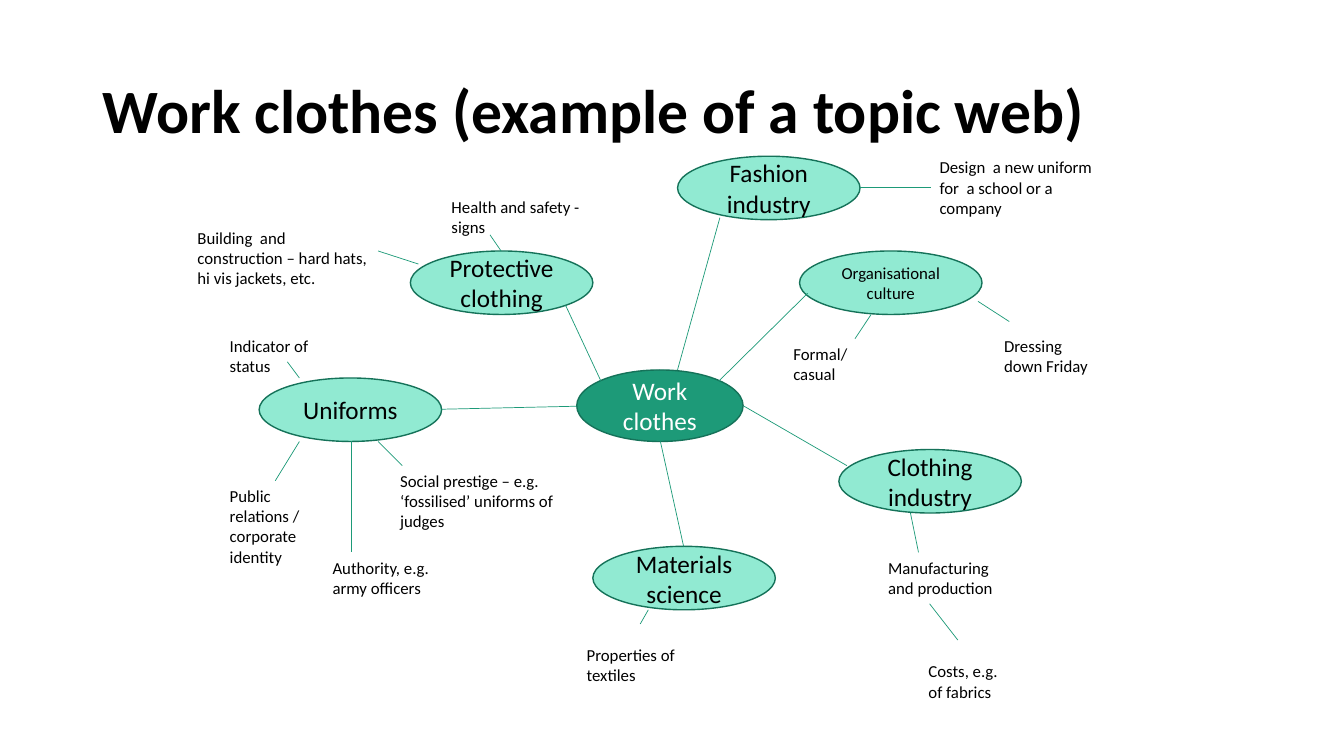
import pptx
import pptx.dml.color
import pptx.enum.shapes
import pptx.enum.text
import pptx.oxml.ns
import pptx.util

EMU_PER_PX = 9144
FONT = "Calibri"
BLACK, WHITE = "000000", "FFFFFF"
GREEN, DARK_GREEN, MINT = "1D9A78", "157259", "91EAD2"
TOPIC_WIDTH, TOPIC_HEIGHT = 181, 63

TOPICS = [
    ("Protective clothing", 407, 249, 18),
    ("Uniforms", 257, 375, 18),
    ("Organisational culture", 793, 249, 12),
    ("Clothing industry", 832, 446, 18),
    ("Materials science", 588, 542, 18),
    ("Fashion industry", 672, 155, 18),
]

NOTES = [
    ("Social prestige – e.g. ‘fossilised’ uniforms of judges", 387, 462, 177, 71),
    ("Authority, e.g. army officers", 320, 548, 134, 50),
    ("Public relations / corporate identity", 218, 477, 102, 91),
    ("Indicator of status", 218, 328, 102, 50),
    ("Properties of textiles", 572, 635, 142, 50),
    ("Manufacturing and production", 871, 548, 142, 50),
    ("Design  a new uniform for  a school or a company", 922, 151, 181, 71),
    ("Building  and construction – hard hats, hi vis jackets, etc.", 186, 221, 189, 71),
    ("Formal/casual", 777, 336, 77, 50),
    ("Dressing down Friday", 986, 328, 117, 50),
    ("Health and safety - signs", 438, 190, 150, 50),
    ("Costs, e.g. of fabrics", 911, 651, 101, 50),
]

NOTE_LINKS = [
    (375, 438, 399, 462),
    (348, 438, 348, 548),
    (297, 438, 273, 477),
    (297, 375, 285, 359),
    (643, 605, 635, 619),
    (903, 509, 911, 548),
    (853, 186, 923, 186),
    (415, 262, 375, 249),
    (864, 312, 848, 336),
    (970, 299, 1001, 319),
    (497, 249, 486, 233),
    (922, 599, 950, 635),
]

TOPIC_LINKS = [
    (672, 367, 714, 216),
    (596, 378, 561, 303),
    (572, 403, 438, 406),
    (655, 438, 678, 542),
    (738, 403, 840, 462),
    (713, 378, 801, 291),
]


def px(*lengths):
    return [pptx.util.Emu(length * EMU_PER_PX) for length in lengths]


def color(hex_string):
    return pptx.dml.color.RGBColor.from_string(hex_string)


def write_text(shape, text, size, font_color, bold=False):
    shape.text_frame.word_wrap = True
    paragraph = shape.text_frame.paragraphs[0]
    paragraph.text = text
    paragraph.font.name = FONT
    paragraph.font.size = pptx.util.Pt(size)
    paragraph.font.bold = bold
    paragraph.font.color.rgb = color(font_color)
    return paragraph


def add_title(slide, text):
    shape = slide.shapes.add_textbox(*px(92, 40, 1150, 145))
    shape.text_frame.vertical_anchor = pptx.enum.text.MSO_ANCHOR.MIDDLE
    write_text(shape, text, 44, BLACK, bold=True).line_spacing = 0.9


def add_bubble(slide, text, left, top, width, height, size, fill, font_color):
    shape = slide.shapes.add_shape(
        pptx.enum.shapes.MSO_SHAPE.OVAL, *px(left, top, width, height))
    shape.shadow.inherit = False
    shape.fill.solid()
    shape.fill.fore_color.rgb = color(fill)
    shape.line.color.rgb = color(DARK_GREEN)
    shape.line.width = pptx.util.Pt(1)
    shape.text_frame.vertical_anchor = pptx.enum.text.MSO_ANCHOR.MIDDLE
    paragraph = write_text(shape, text, size, font_color)
    paragraph.alignment = pptx.enum.text.PP_ALIGN.CENTER


def add_note(slide, text, left, top, width, height):
    shape = slide.shapes.add_textbox(*px(left, top, width, height))
    write_text(shape, text, 12, BLACK)
    shape.text_frame.auto_size = pptx.enum.text.MSO_AUTO_SIZE.SHAPE_TO_FIT_TEXT


def add_link(slide, *ends):
    connector = slide.shapes.add_connector(
        pptx.enum.shapes.MSO_CONNECTOR.STRAIGHT, *px(*ends))
    connector.line.color.rgb = color(GREEN)
    connector.line.width = pptx.util.Pt(0.5)
    properties = connector._element.spPr
    properties.append(properties.makeelement(pptx.oxml.ns.qn("a:effectLst"), {}))


def main():
    presentation = pptx.Presentation()
    presentation.slide_width, presentation.slide_height = px(1333, 750)
    slide = presentation.slides.add_slide(presentation.slide_layouts[6])

    add_title(slide, "Work clothes (example of a topic web)")
    add_bubble(slide, "Work clothes", 572, 367, 165, 71, 18, GREEN, WHITE)
    for text, left, top, size in TOPICS:
        add_bubble(slide, text, left, top, TOPIC_WIDTH, TOPIC_HEIGHT, size, MINT, BLACK)
    for note in NOTES:
        add_note(slide, *note)
    for link in NOTE_LINKS + TOPIC_LINKS:
        add_link(slide, *link)

    presentation.save("out.pptx")


if __name__ == "__main__":
    main()
